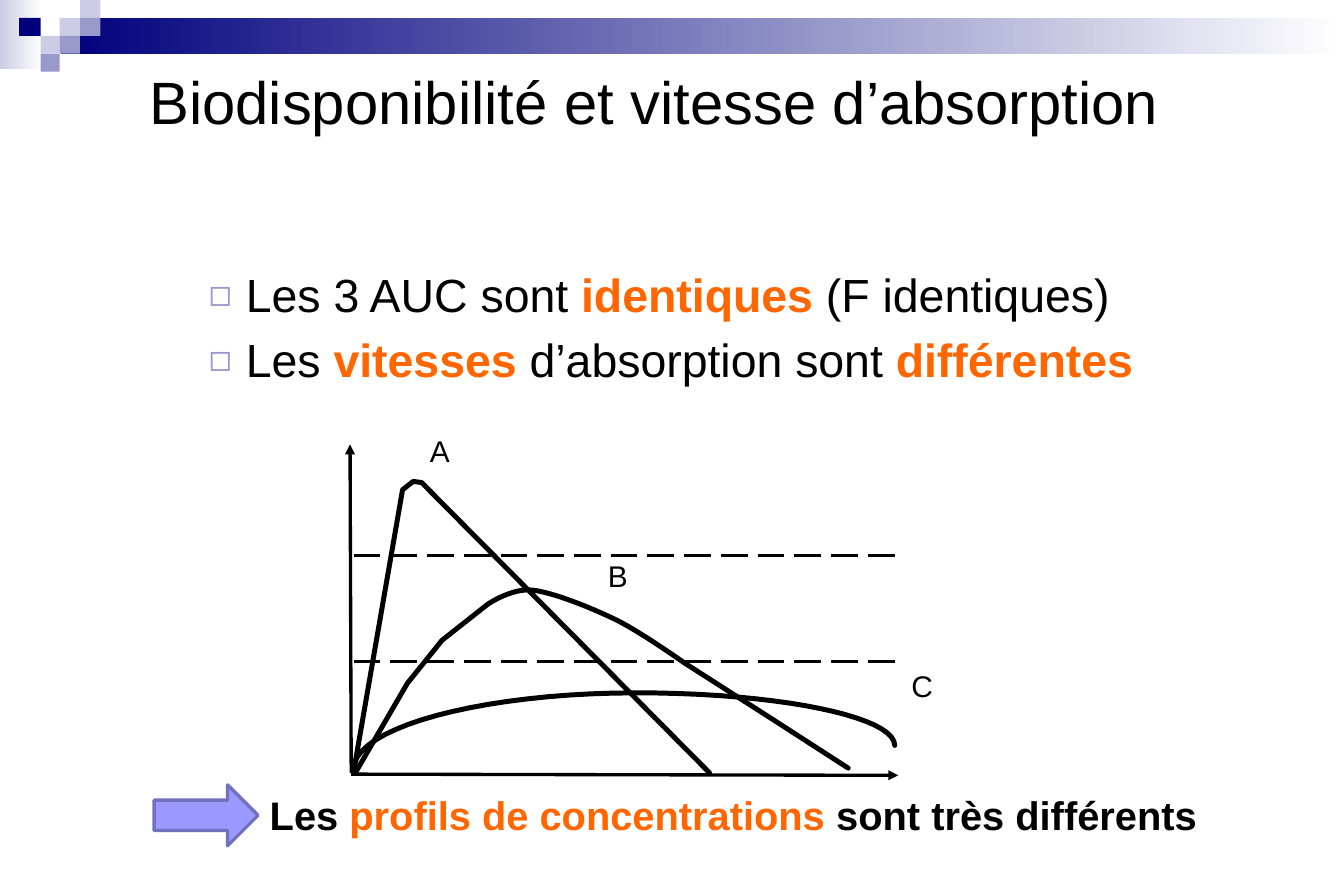
import pptx
import pptx.util
import pptx.dml.color
import pptx.enum.dml
import pptx.enum.shapes
import pptx.enum.text
import pptx.oxml
import pptx.oxml.ns

Inches = pptx.util.Inches
Pt = pptx.util.Pt
RGB = pptx.dml.color.RGBColor
SHAPE = pptx.enum.shapes.MSO_SHAPE
FIT = pptx.enum.text.MSO_AUTO_SIZE
qn = pptx.oxml.ns.qn

BLACK = RGB(0x00, 0x00, 0x00)
WHITE = RGB(0xFF, 0xFF, 0xFF)
ORANGE = RGB(0xFF, 0x66, 0x00)
NAVY = RGB(0x00, 0x00, 0x7D)
MID = RGB(0x99, 0x99, 0xCC)
PALE = RGB(0xCC, 0xCC, 0xE6)
BLUE = RGB(0x99, 0x99, 0xFF)
EDGE = RGB(0x71, 0x71, 0xBD)

# Tile grid: column edges, row height, and (column, row, colour)
COLS = [0.16, 0.34, 0.5, 0.67, 0.84]
ROW = 0.15
TILES = [(2, 1, PALE), (3, 0, PALE), (3, 1, MID), (1, 2, PALE),
         (0, 1, NAVY), (2, 2, MID), (1, 3, MID)]

# Curves: a start, then steps of one point (line) or three (Bezier)
CURVES = [
    ((2.96, 6.44), [[(2.96, 6.09), (4.03, 5.8), (5.33, 5.8)],
                    [(6.53, 5.8), (7.49, 6), (7.49, 6.24)]]),
    ((2.98, 6.46), [[(3.41, 5.72)], [(3.7, 5.36)], [(4.08, 5.06)],
                    [(4.08, 5.06), (4.28, 4.92), (4.46, 4.94)],
                    [(4.63, 4.96), (4.93, 5.08), (5.14, 5.18)],
                    [(5.35, 5.28), (5.73, 5.55), (5.73, 5.55)],
                    [(6.45, 6.01)], [(7.1, 6.43)]]),
    ((2.96, 6.46), [[(3.37, 4.1)], [(3.46, 4.03)], [(3.53, 4.04)],
                    [(5.94, 6.47)]]),
]
LABELS = [("A", 3.5, 3.57), ("B", 4.99, 4.62), ("C", 7.53, 5.54)]


def add_xml(parent, tag, **attrs):
    node = pptx.oxml.parse_xml(
        f'<a:{tag} xmlns:a="http://schemas.openxmlformats.org/drawingml/2006/main"/>')
    for name, value in attrs.items():
        node.set(name, value)
    parent.append(node)
    return node


def add_block(slide, kind, box, color, fade=False):
    block = slide.shapes.add_shape(kind, *map(Inches, box))
    block.shadow.inherit = False
    block.line.fill.background()
    if fade:
        block.fill.gradient()
        block.fill.gradient_angle = 0
        for stop, tone in zip(block.fill.gradient_stops, (color, WHITE)):
            stop.color.rgb = tone
    else:
        block.fill.solid()
        block.fill.fore_color.rgb = color
    return block


def add_line(slide, start, end, arrow=False):
    line = slide.shapes.add_connector(
        pptx.enum.shapes.MSO_CONNECTOR.STRAIGHT, *map(Inches, start + end))
    line.line.color.rgb = BLACK
    line.line.width = Pt(2)
    props = line._element.spPr
    if arrow:
        add_xml(props.find(qn("a:ln")), "tailEnd", type="triangle")
    else:
        line.line.dash_style = pptx.enum.dml.MSO_LINE.LONG_DASH
    add_xml(props, "effectLst")


def trace(start, steps, count=20):
    points = [start]
    for step in steps:
        if len(step) == 1:
            points += step
            continue
        ends = [points[-1]] + step
        for i in range(1, count + 1):
            t = i / count
            parts = ((1 - t) ** 3, 3 * t * (1 - t) ** 2,
                     3 * t * t * (1 - t), t ** 3)
            points.append(tuple(sum(w * p[axis] for w, p in zip(parts, ends))
                                for axis in (0, 1)))
    return [(Inches(x), Inches(y)) for x, y in points]


def add_curve(slide, start, steps):
    points = trace(start, steps)
    pen = slide.shapes.build_freeform(*points[0])
    pen.add_line_segments(points[1:], close=False)
    curve = pen.convert_to_shape()
    curve.shadow.inherit = False
    curve.fill.background()
    curve.line.color.rgb = BLACK
    curve.line.width = Pt(3)
    curve._element.spPr.find(qn("a:ln")).set("cap", "rnd")


def add_runs(para, runs, size):
    for text, color, bold in runs:
        run = para.add_run()
        run.text = text
        run.font.name = "Arial"
        run.font.size = Pt(size)
        run.font.color.rgb = color
        run.font.bold = bold


def add_text(slide, box, lines, size, wrap=True):
    frame = slide.shapes.add_textbox(*map(Inches, box)).text_frame
    frame.word_wrap = wrap
    for i, runs in enumerate(lines):
        para = frame.add_paragraph() if i else frame.paragraphs[0]
        add_runs(para, runs, size)
    return frame


def add_bullet(para):
    para.space_before = Pt(5.6)
    props = para._p.get_or_add_pPr()
    props.set("marL", str(Inches(0.81)))
    props.set("indent", str(Inches(-0.31)))
    add_xml(add_xml(props, "buClr"), "srgbClr", val=str(MID))
    add_xml(props, "buSzPct", val="80000")
    add_xml(props, "buFont", typeface="Arial")
    add_xml(props, "buChar", char="◻")


def set_title(slide, text):
    title = slide.shapes.title
    title.left, title.top = Inches(1.15), Inches(0.6)
    title.width, title.height = Inches(8.89), Inches(0.49)
    frame = title.text_frame
    frame.auto_size = FIT.NONE
    frame.vertical_anchor = pptx.enum.text.MSO_ANCHOR.MIDDLE
    para = frame.paragraphs[0]
    para.alignment = pptx.enum.text.PP_ALIGN.LEFT
    add_runs(para, [(text, BLACK, False)], 36)


def main():
    deck = pptx.Presentation()
    deck.slide_width, deck.slide_height = Inches(11.25), Inches(7.5)
    slide = deck.slides.add_slide(deck.slide_layouts[5])

    # Top band and tiles
    add_block(slide, SHAPE.RECTANGLE, (0, 0, 0.35, 0.58), PALE, fade=True)
    add_block(slide, SHAPE.RECTANGLE, (0.51, 0.15, 10.74, 0.3), NAVY, fade=True)
    for col, row, color in TILES:
        wide = COLS[col + 1] - COLS[col]
        add_block(slide, SHAPE.RECTANGLE, (COLS[col], row * ROW, wide, ROW), color)

    # Title and bullets
    set_title(slide, "Biodisponibilité et vitesse d’absorption")
    body = add_text(slide, (1.15, 2.18, 8.96, 1.15), [
        [("Les 3 AUC sont ", BLACK, False), ("identiques ", ORANGE, True),
         ("(F identiques)", BLACK, False)],
        [("Les", BLACK, False), (" vitesses ", ORANGE, True),
         ("d’absorption sont ", BLACK, False), ("différentes", ORANGE, True)],
    ], 28)
    for para in body.paragraphs:
        add_bullet(para)

    # Axes, thresholds and curves
    add_line(slide, (2.94, 6.47), (2.93, 3.72), arrow=True)
    add_line(slide, (2.94, 6.48), (7.52, 6.49), arrow=True)
    for level in (5.54, 4.65):
        add_line(slide, (2.96, level), (7.49, level))
    for start, steps in CURVES:
        add_curve(slide, start, steps)
    for name, left, top in LABELS:
        add_text(slide, (left, top, 0.71, 0.42), [[(name, BLACK, False)]], 18)

    # Conclusion
    arrow = add_block(slide, SHAPE.RIGHT_ARROW, (1.29, 6.57, 0.87, 0.51), BLUE)
    arrow.line.color.rgb = EDGE
    arrow.line.width = Pt(2)
    note = add_text(slide, (2.16, 6.57, 8.03, 0.51), [
        [("Les ", BLACK, True), ("profils de concentrations ", ORANGE, True),
         ("sont très différents", BLACK, True)]], 24, wrap=False)
    note.auto_size = FIT.SHAPE_TO_FIT_TEXT

    deck.save("out.pptx")


if __name__ == "__main__":
    main()
